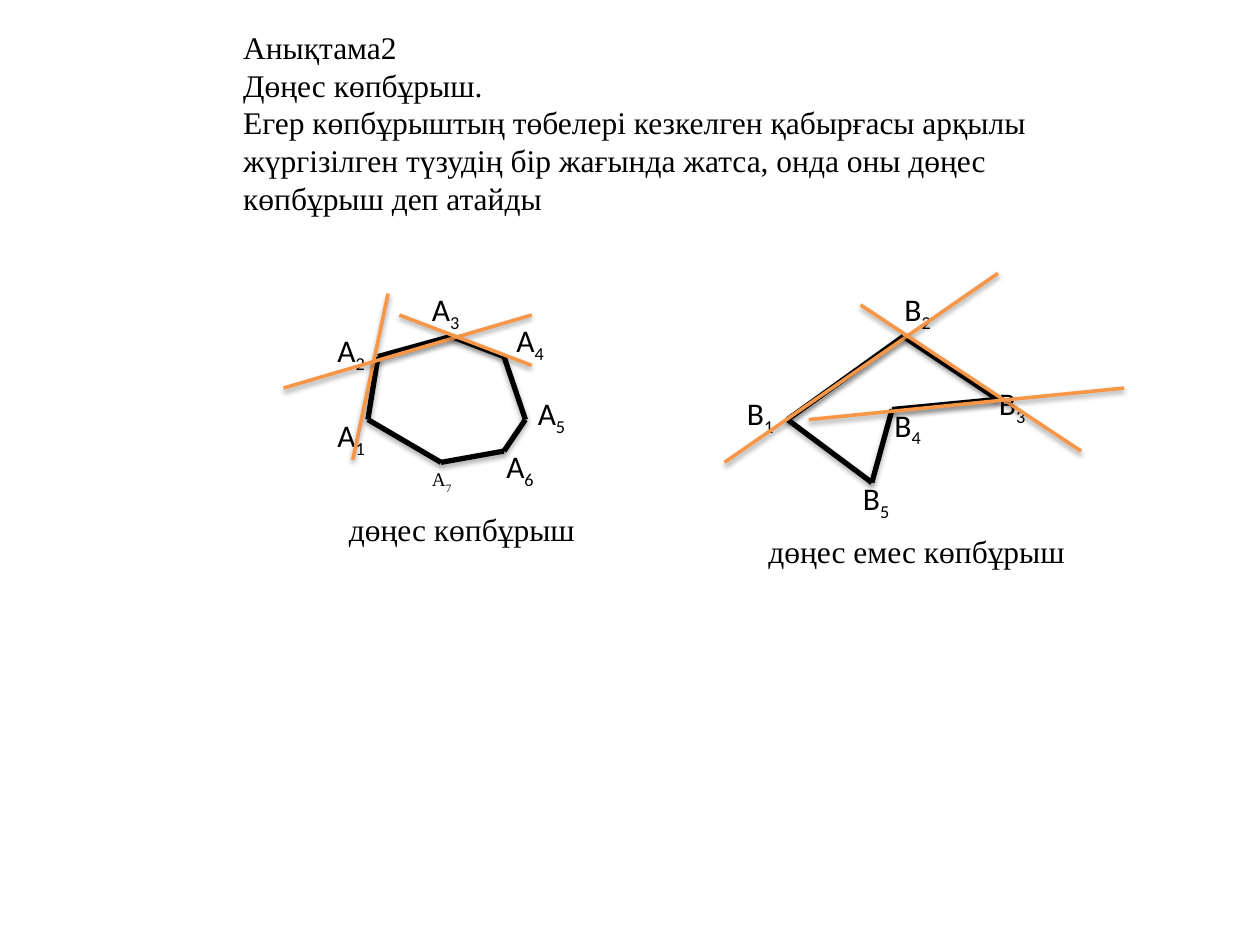
from dataclasses import dataclass
from itertools import pairwise

from lxml.etree import SubElement
from pptx import Presentation
from pptx.dml.color import RGBColor
from pptx.enum.shapes import MSO_CONNECTOR
from pptx.enum.text import MSO_ANCHOR, MSO_AUTO_SIZE, PP_ALIGN
from pptx.oxml.ns import qn
from pptx.util import Inches, Pt


@dataclass(frozen=True)
class Theme:
    ink: RGBColor = RGBColor(0, 0, 0)
    accent: RGBColor = RGBColor(0xF7, 0x96, 0x46)
    serif: str = "Times New Roman"
    sans: str = "Calibri"
    text_size: float = 18
    small_size: float = 11
    side_width: float = 3
    secant_width: float = 2


THEME = Theme()

DEFINITION = [
    "Анықтама2",
    "Дөңес көпбұрыш.",
    "Егер көпбұрыштың төбелері кезкелген қабырғасы арқылы жүргізілген түзудің "
    "бір жағында жатса, онда оны дөңес көпбұрыш деп атайды",
]
CONVEX_VERTICES = [(2.92, 3.33), (3, 2.83), (3.58, 2.67), (4, 2.83),
                   (4.17, 3.33), (4, 3.58), (3.5, 3.67)]
CONCAVE_VERTICES = [(6.25, 3.33), (7.17, 2.67), (7.92, 3.17), (7.08, 3.25), (6.92, 3.83)]
CONVEX_LABELS = [(2.58, 3.25), (2.58, 2.58), (3.33, 2.25), (4, 2.5), (4.17, 3.08), (3.92, 3.5)]
CONCAVE_LABELS = [(5.83, 3.08), (7.08, 2.25), (7.83, 3), (7, 3.17), (6.75, 3.75)]
SECANTS = [
    ((3.08, 2.33), (2.8, 3.65)),
    ((2.25, 3.08), (4.22, 2.5)),
    ((3.17, 2.5), (4.22, 2.9)),
    ((5.75, 3.67), (7.92, 2.17)),
    ((6.83, 2.42), (8.58, 3.58)),
    ((6.42, 3.33), (8.92, 3.08)),
]


def style_run(run, font_name, size):
    run.font.name = font_name
    run.font.size = Pt(size)
    run.font.color.rgb = THEME.ink


def add_definition(slide):
    title = slide.shapes.title
    title.left, title.top = Inches(1.83), Inches(0.17)
    title.width, title.height = Inches(6.83), Inches(1.62)
    frame = title.text_frame
    frame.text = "\n".join(DEFINITION)
    frame.vertical_anchor = MSO_ANCHOR.TOP
    frame.auto_size = MSO_AUTO_SIZE.SHAPE_TO_FIT_TEXT
    for paragraph in frame.paragraphs:
        paragraph.alignment = PP_ALIGN.LEFT
        style_run(paragraph.runs[0], THEME.serif, THEME.text_size)


def add_shadow(line, opacity, distance):
    effects = SubElement(line._element.spPr, qn("a:effectLst"))
    shadow = SubElement(effects, qn("a:outerShdw"), blurRad=str(Pt(3.15)),
                        dist=str(Pt(distance)), dir="5400000", rotWithShape="0")
    color = SubElement(shadow, qn("a:srgbClr"), val=str(THEME.ink))
    SubElement(color, qn("a:alpha"), val=str(opacity * 1000))


def add_segment(slide, start, end, color, width, opacity, distance):
    line = slide.shapes.add_connector(
        MSO_CONNECTOR.STRAIGHT, *(Inches(value) for value in (*start, *end)))
    line.line.color.rgb = color
    line.line.width = Pt(width)
    add_shadow(line, opacity, distance)


def add_polygon(slide, vertices):
    for start, end in pairwise(vertices + vertices[:1]):
        add_segment(slide, start, end, THEME.ink, THEME.side_width, 35, 1.8)


def add_text(slide, parts, left, top, width, height=0.4, font_name=THEME.serif,
             size=THEME.text_size, wrap=True):
    box = slide.shapes.add_textbox(Inches(left), Inches(top), Inches(width), Inches(height))
    frame = box.text_frame
    frame.word_wrap = wrap
    frame.auto_size = MSO_AUTO_SIZE.SHAPE_TO_FIT_TEXT
    for part in parts:
        run = frame.paragraphs[0].add_run()
        run.text = part
        style_run(run, font_name, size)
    return frame


def lower_index(frame, percent):
    index = frame.paragraphs[0].runs[1]
    index._r.get_or_add_rPr().set("baseline", str(-percent * 1000))


def add_vertex_labels(slide, letter, positions, width):
    for number, (left, top) in enumerate(positions, start=1):
        label = add_text(slide, (letter, str(number)), left, top, width,
                         font_name=THEME.sans, wrap=False)
        lower_index(label, 25)


def add_small_label(slide):
    label = add_text(slide, ("А", "7"), 3.33, 3.67, 0.5, 0.29, size=THEME.small_size)
    label.vertical_anchor = MSO_ANCHOR.MIDDLE
    lower_index(label, 30)


def main():
    presentation = Presentation()
    presentation.slide_width, presentation.slide_height = Inches(10), Inches(7.5)
    slide = presentation.slides.add_slide(presentation.slide_layouts.get_by_name("Title Only"))

    add_definition(slide)
    add_polygon(slide, CONVEX_VERTICES)
    add_polygon(slide, CONCAVE_VERTICES)
    add_vertex_labels(slide, "А", CONVEX_LABELS, 0.43)
    add_small_label(slide)
    add_vertex_labels(slide, "В", CONCAVE_LABELS, 0.42)
    add_text(slide, ["дөңес көпбұрыш"], 2.67, 4, 2.33)
    add_text(slide, ["дөңес емес көпбұрыш"], 6, 4.17, 2.67)
    for start, end in SECANTS:
        add_segment(slide, start, end, THEME.accent, THEME.secant_width, 38, 1.6)

    presentation.save("out.pptx")


if __name__ == "__main__":
    main()
